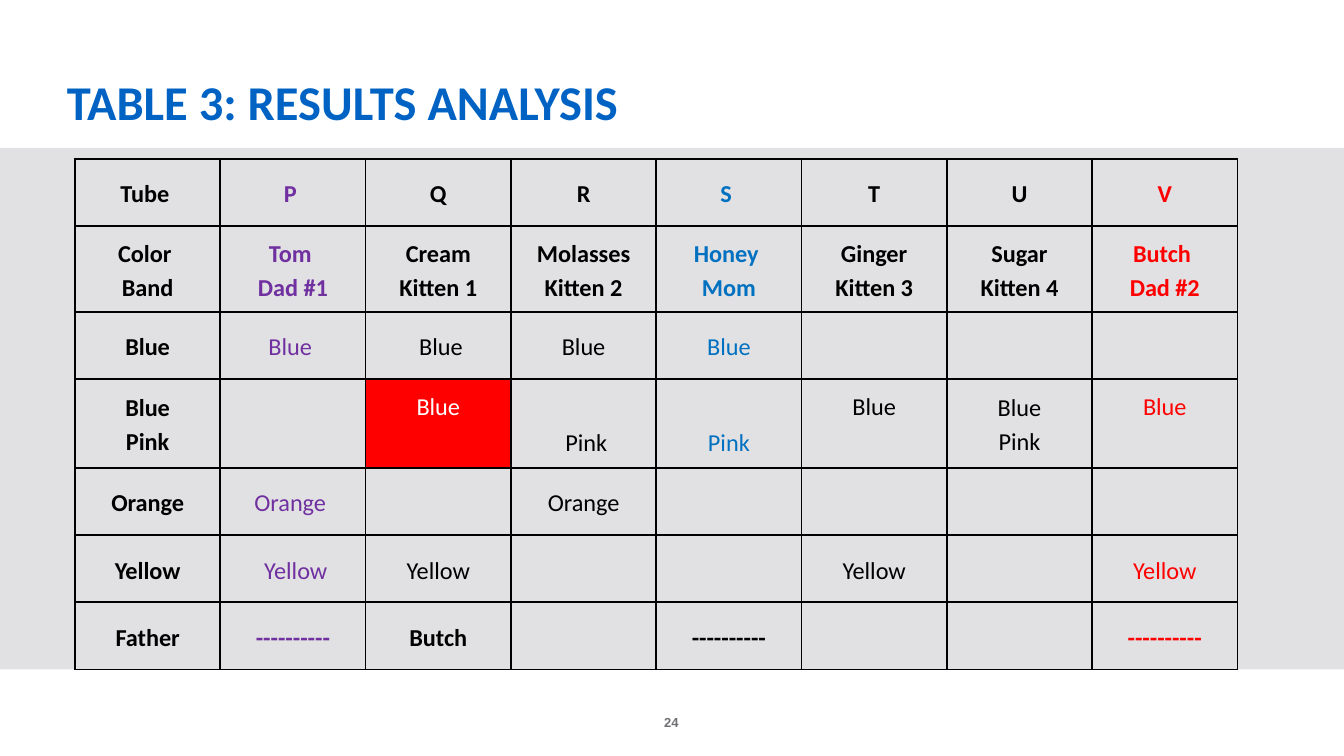
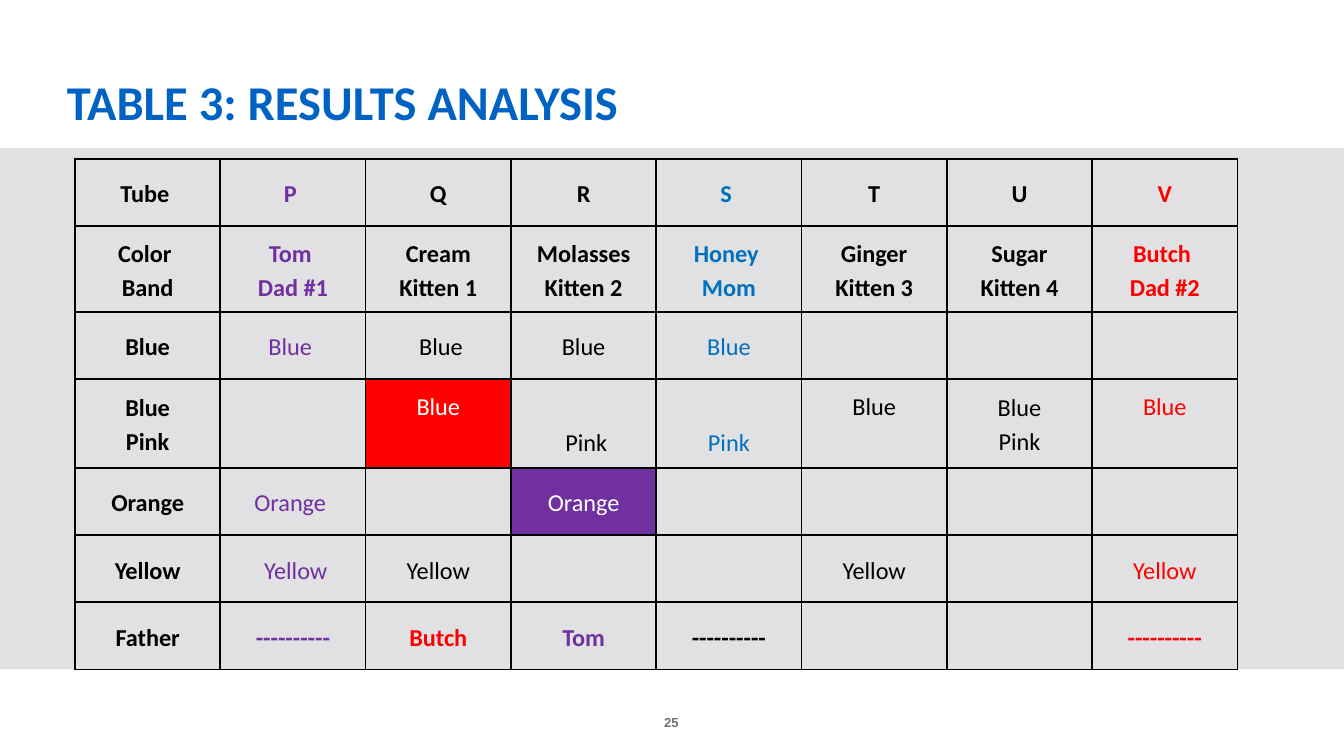
import dataclasses

import lxml.etree
import pptx
import pptx.dml.color
import pptx.enum.shapes
import pptx.enum.text
import pptx.oxml.ns
import pptx.util

ALIGN = pptx.enum.text.PP_ALIGN
ANCHOR = pptx.enum.text.MSO_ANCHOR


@dataclasses.dataclass(frozen=True)
class Theme:
    wide: float = 10
    high: float = 5.625
    font: str = "Calibri"
    foot: str = "Arial"
    title_size: int = 26
    cell_size: int = 13
    foot_size: int = 7
    leading: float = 1.15
    pad: float = 0.07
    title: str = "0063C3"
    band: str = "E1E1E3"
    gray: str = "716F73"
    black: str = "000000"
    white: str = "FFFFFF"
    purple: str = "7030A0"
    blue: str = "0070C0"
    red: str = "FF0000"


THEME = Theme()

# Columns are split by "|", lines in a cell by "/".
ROWS = [
    "Tube |P |Q|R|S |T|U|V",
    "Color /Band|Tom /Dad #1|Cream/Kitten 1|Molasses/Kitten 2|Honey /Mom"
    "|Ginger/Kitten 3|Sugar/Kitten 4|Butch /Dad #2",
    "Blue|Blue | Blue|Blue|Blue|||",
    "Blue/Pink||Blue| Pink|Pink|Blue|Blue/Pink|Blue",
    "Orange|Orange ||Orange||||",
    "Yellow| Yellow|Yellow|||Yellow||Yellow",
]
TALL = [0.5, 0.64, 0.5, 0.66, 0.5, 0.5, 0.5]
BOLD_ROWS = (0, 1, 6)
PAIR_ROW = 3  # holds a Blue line above a Pink line
PARENTS = {1: THEME.purple, 4: THEME.blue, 7: THEME.red}
FATHER = 6

# Cell marks: (row, column): (text colour, fill)
BUTCH_MARKS = {(PAIR_ROW, 2): (THEME.white, THEME.red),
               (FATHER, 4): (THEME.black, None)}
TOM_MARKS = {**BUTCH_MARKS,
             (4, 3): (THEME.white, THEME.purple),
             (FATHER, 2): (THEME.red, None),
             (FATHER, 3): (THEME.purple, None)}


def tint(code):
    return pptx.dml.color.RGBColor.from_string(code)


def place(left, top, width, height):
    """Turn percent of the slide into lengths."""
    return [pptx.util.Inches(part * side / 100) for part, side in
            zip((left, top, width, height), (THEME.wide, THEME.high) * 2)]


def write(frame, text, *, size, color, font=THEME.font, bold=True,
          align=ALIGN.CENTER, leading=None):
    """Fill a text frame, one paragraph for each line of text."""
    for index, line in enumerate(text.split("/")):
        para = frame.paragraphs[0] if index == 0 else frame.add_paragraph()
        para.alignment = align
        para.line_spacing = leading
        run = para.add_run()
        run.text = line
        run.font.name = font
        run.font.size = pptx.util.Pt(size)
        run.font.bold = bold
        run.font.color.rgb = tint(color)


def add_text(slide, area, text, inset=(0, 0), **style):
    frame = slide.shapes.add_textbox(*place(*area)).text_frame
    frame.word_wrap = True
    frame.vertical_anchor = ANCHOR.BOTTOM
    frame.margin_left = frame.margin_right = pptx.util.Inches(inset[0])
    frame.margin_top = frame.margin_bottom = pptx.util.Inches(inset[1])
    write(frame, text, **style)


def add_band(slide):
    band = slide.shapes.add_shape(
        pptx.enum.shapes.MSO_SHAPE.RECTANGLE, *place(0, 19.58, 100, 69))
    band.shadow.inherit = False
    band.fill.solid()
    band.fill.fore_color.rgb = tint(THEME.band)
    band.line.fill.background()


def rule(cell):
    """Draw a thin line on each side of a cell."""
    props = cell._tc.get_or_add_tcPr()
    name = pptx.oxml.ns.qn
    for side in "LRTB":
        line = lxml.etree.SubElement(
            props, name(f"a:ln{side}"), w=str(pptx.util.Pt(1)))
        fill = lxml.etree.SubElement(line, name("a:solidFill"))
        lxml.etree.SubElement(fill, name("a:srgbClr"), val=THEME.black)


def anchor(row, text):
    """Keep a lone Blue or Pink on its own line of the pair row."""
    if row != PAIR_ROW or "/" in text:
        return ANCHOR.MIDDLE
    return ANCHOR.BOTTOM if "Pink" in text else ANCHOR.TOP


def fill_cell(cell, row, col, text, marks):
    ink, fill = marks.get((row, col), (PARENTS.get(col, THEME.black), None))
    rule(cell)
    if fill:
        cell.fill.solid()
        cell.fill.fore_color.rgb = tint(fill)
    else:
        cell.fill.background()
    cell.vertical_anchor = anchor(row, text)
    pad = pptx.util.Inches(THEME.pad)
    cell.margin_left = cell.margin_right = pad
    cell.margin_top = cell.margin_bottom = pad
    if text:
        write(cell.text_frame, text, size=THEME.cell_size, color=ink,
              bold=col == 0 or row in BOLD_ROWS, leading=THEME.leading)


def add_grid(slide, rows, marks):
    cells = [row.split("|") for row in rows]
    count = len(cells[0])
    area = place(5.58, 21, 86.5, 100 * sum(TALL) / THEME.high)
    table = slide.shapes.add_table(len(cells), count, *area).table
    table.first_row = table.horz_banding = False
    for col in table.columns:
        col.width = area[2] // count
    for row, line in enumerate(cells):
        table.rows[row].height = pptx.util.Inches(TALL[row])
        for col, text in enumerate(line):
            fill_cell(table.cell(row, col), row, col, text, marks)


def add_page(deck, number, fathers, marks):
    slide = deck.slides.add_slide(deck.slide_layouts[6])
    add_text(slide, (45.4, 91.2, 9.1, 5.33), str(number), font=THEME.foot,
             size=THEME.foot_size, color=THEME.gray)
    add_band(slide)
    add_text(slide, (4, 8.53, 92, 9.6), "TABLE 3: RESULTS ANALYSIS",
             inset=(0.1, 0.05), size=THEME.title_size, color=THEME.title,
             align=ALIGN.LEFT)
    dash = "-" * 10
    last = "|".join(["Father", dash, *fathers, dash, "", "", dash])
    add_grid(slide, [*ROWS, last], marks)


def main():
    deck = pptx.Presentation()
    deck.slide_width = pptx.util.Inches(THEME.wide)
    deck.slide_height = pptx.util.Inches(THEME.high)
    add_page(deck, 24, ("Butch", ""), BUTCH_MARKS)
    add_page(deck, 25, ("Butch", "Tom"), TOM_MARKS)
    deck.save("out.pptx")


if __name__ == "__main__":
    main()
